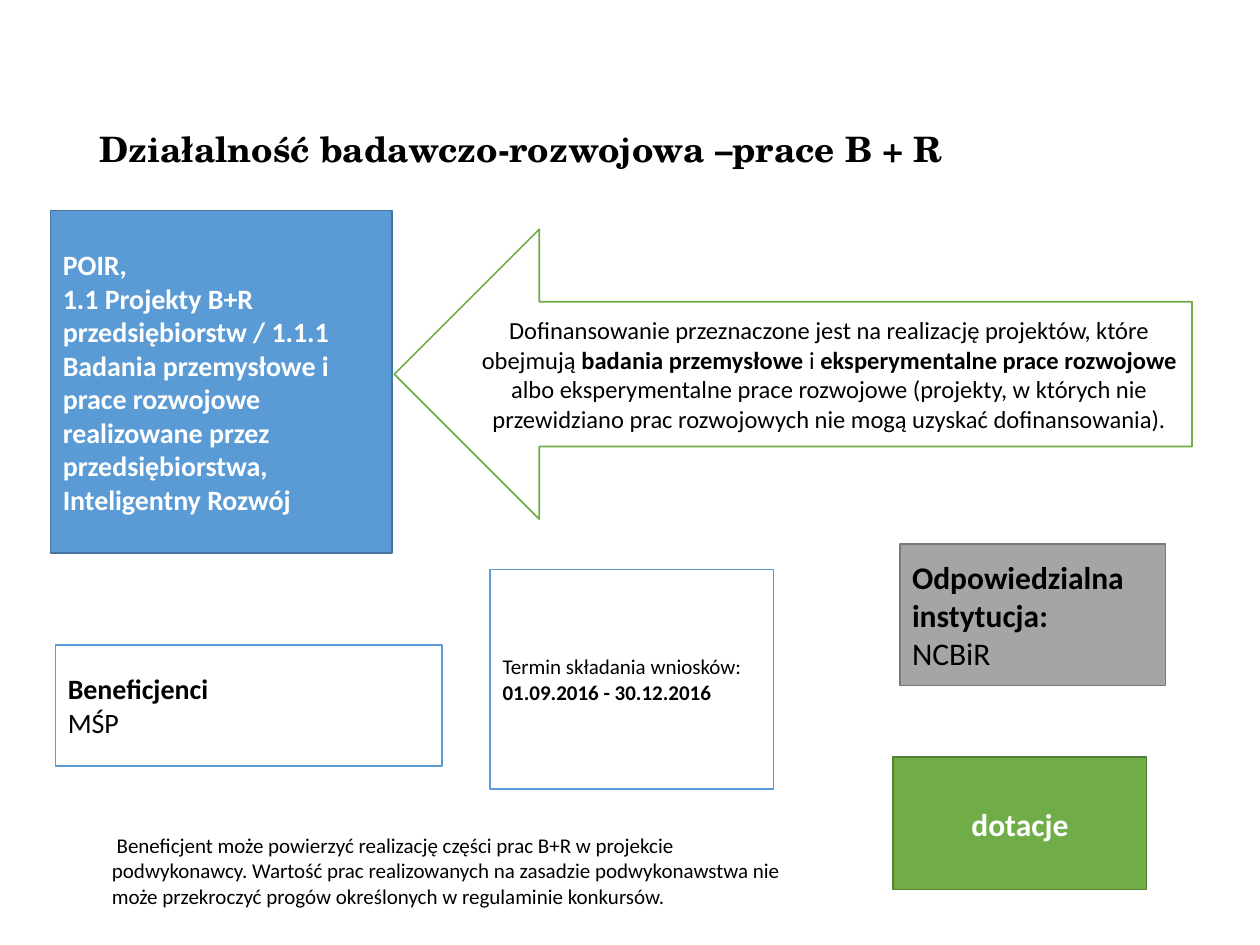
from pptx import Presentation
from pptx.dml.color import RGBColor
from pptx.enum.shapes import MSO_SHAPE
from pptx.enum.text import MSO_ANCHOR, PP_ALIGN
from pptx.util import Inches, Pt


def color(value):
    return RGBColor.from_string(value)


class SlideBuilder:
    font_name = "Calibri"
    line_width = Pt(1)

    def __init__(self, presentation):
        self.slide = presentation.slides.add_slide(presentation.slide_layouts[6])

    def add_runs(self, shape, paragraphs, size, text_color, align, anchor, font_name=None):
        frame = shape.text_frame
        frame.word_wrap = True
        frame.vertical_anchor = anchor
        for index, runs in enumerate(paragraphs):
            paragraph = frame.add_paragraph() if index else frame.paragraphs[0]
            paragraph.alignment = align
            for text, bold in runs:
                run = paragraph.add_run()
                run.text = text
                run.font.name = font_name or self.font_name
                run.font.size = Pt(size)
                run.font.bold = bold
                run.font.color.rgb = color(text_color)

    def add_text(self, box, paragraphs, size, font_name=None):
        shape = self.slide.shapes.add_textbox(*map(Inches, box))
        self.add_runs(shape, paragraphs, size, "000000", PP_ALIGN.LEFT, MSO_ANCHOR.TOP, font_name)
        return shape

    def add_block(self, box, paragraphs, size, fill, line, text_color="000000",
                  align=PP_ALIGN.LEFT, kind=MSO_SHAPE.RECTANGLE):
        shape = self.slide.shapes.add_shape(kind, *map(Inches, box))
        shape.shadow.inherit = False
        shape.fill.solid()
        shape.fill.fore_color.rgb = color(fill)
        shape.line.color.rgb = color(line)
        shape.line.width = self.line_width
        self.add_runs(shape, paragraphs, size, text_color, align, MSO_ANCHOR.MIDDLE)
        return shape


def main():
    presentation = Presentation()
    presentation.slide_width = Inches(10)
    presentation.slide_height = Inches(7.5)
    builder = SlideBuilder(presentation)

    title = builder.add_text(
        (0.69, 1.05, 8.62, 1.02),
        [[("Działalność badawczo-rozwojowa –prace B + R", True)]],
        20, "TeX Gyre Schola")
    title.text_frame.margin_top = Inches(0)
    title.text_frame.paragraphs[0].line_spacing = 0.9

    builder.add_block(
        (0.4, 1.67, 2.71, 2.72),
        [[("POIR,", True)],
         [("1.1 Projekty B+R przedsiębiorstw / 1.1.1 Badania przemysłowe i prace "
           "rozwojowe realizowane przez przedsiębiorstwa, Inteligentny Rozwój", True)]],
        16, "5B9BD5", "43739E", "FFFFFF")
    builder.add_block(
        (3.13, 1.82, 6.33, 2.3),
        [[("Dofinansowanie przeznaczone jest na realizację projektów, które obejmują ", False),
          ("badania przemysłowe", True),
          (" i ", False),
          ("eksperymentalne prace rozwojowe", True),
          (" albo eksperymentalne prace rozwojowe (projekty, w których nie przewidziano "
           "prac rozwojowych nie mogą uzyskać dofinansowania).", False)]],
        14, "FFFFFF", "70AD47", align=PP_ALIGN.CENTER, kind=MSO_SHAPE.LEFT_ARROW)
    builder.add_block(
        (0.44, 5.12, 3.07, 0.96),
        [[("Beneficjenci", True)], [("MŚP", False)]],
        16, "FFFFFF", "5B9BD5")
    builder.add_block(
        (3.89, 4.52, 2.25, 1.74),
        [[("Termin składania wniosków:", False)], [("01.09.2016 - 30.12.2016", True)]],
        12, "FFFFFF", "5B9BD5")
    builder.add_block(
        (7.14, 4.32, 2.11, 1.12),
        [[("Odpowiedzialna instytucja:", True)], [("NCBiR", False)]],
        18, "A5A5A5", "7A7A7A")
    builder.add_block(
        (7.09, 6.01, 2.01, 1.05), [[("dotacje", True)]],
        18, "70AD47", "538035", "FFFFFF", PP_ALIGN.CENTER)

    builder.add_text(
        (0.79, 6.56, 5.54, 0.71),
        [[(" Beneficjent może powierzyć realizację części prac B+R w projekcie "
           "podwykonawcy. Wartość prac realizowanych na zasadzie podwykonawstwa nie "
           "może przekroczyć progów określonych w regulaminie konkursów.", False)]],
        12)

    presentation.save("out.pptx")


if __name__ == "__main__":
    main()
